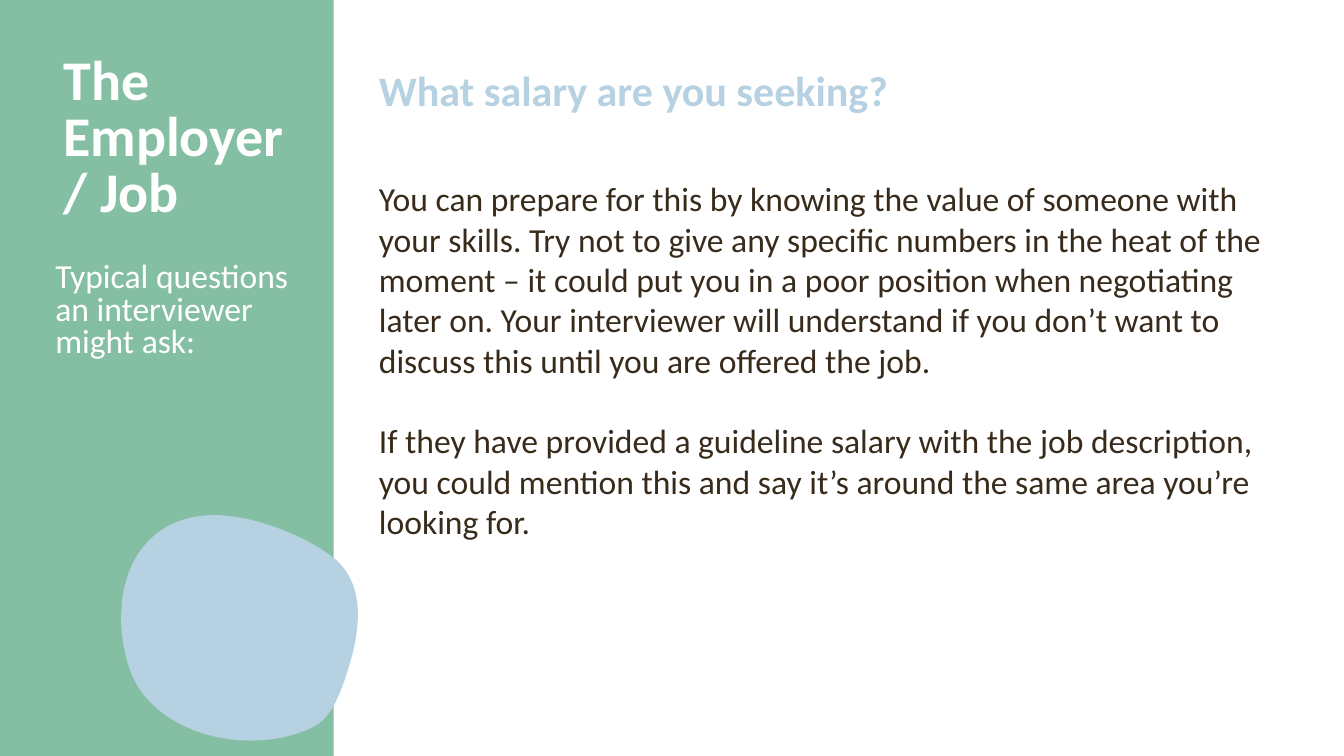
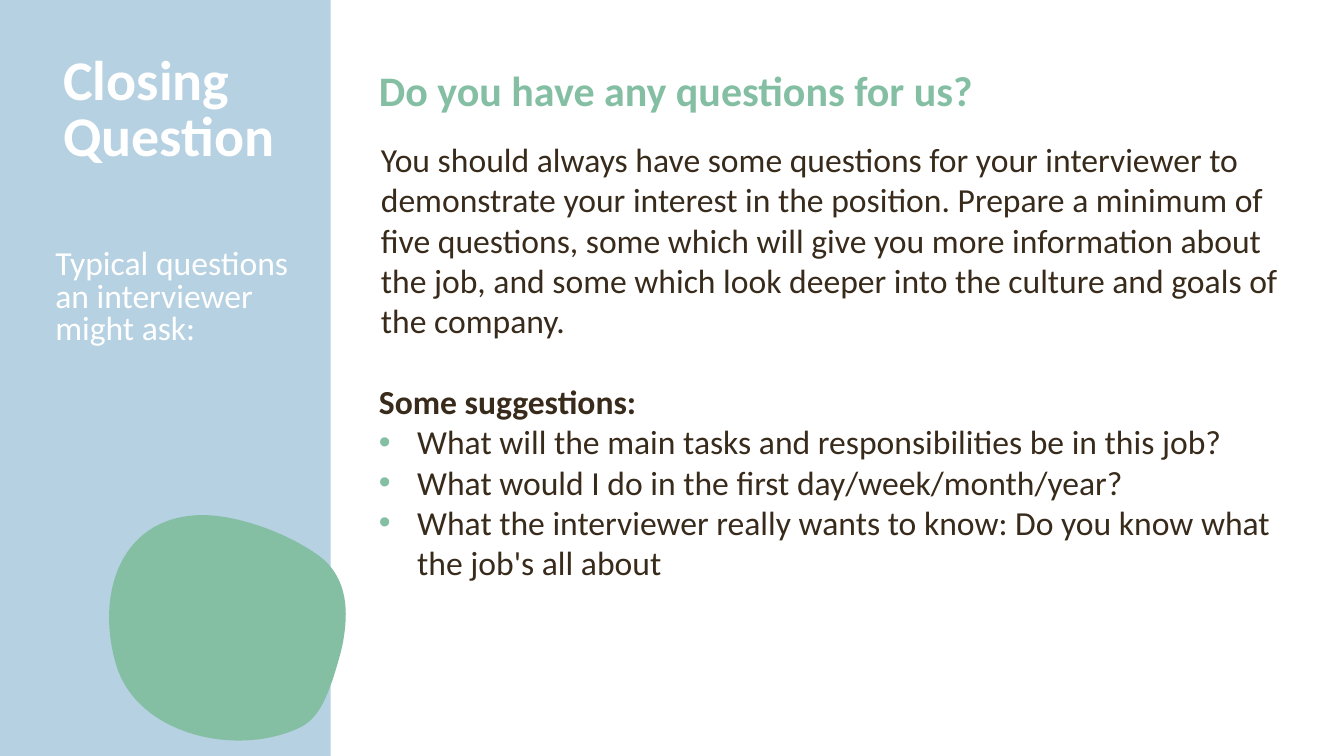
"""Build two interview advice slides with a side band and a rounded blob."""
from dataclasses import dataclass
from math import cos, radians, sin

from lxml.etree import SubElement
from pptx import Presentation
from pptx.dml.color import RGBColor
from pptx.enum.shapes import MSO_SHAPE
from pptx.oxml.ns import qn
from pptx.util import Inches, Pt

GREEN = RGBColor(0x84, 0xBF, 0xA4)
BLUE = RGBColor(0xB6, 0xD1, 0xE1)
WHITE = RGBColor(0xFF, 0xFF, 0xFF)
BROWN = RGBColor(0x38, 0x2B, 0x1B)
FONT = "Calibri"
HANG = 0.38
PITCH = 28.8
TURN = 82.8
LEFT, TOP, WIDTH, HEIGHT = 1.25, 5.05, 2.28, 2.35
START = (3.53, 6.32)
CURVES = (
    ((3.58, 6.01), (3.55, 5.69), (3.25, 5.49)),
    ((2.96, 5.29), (2.51, 5.12), (2.15, 5.11)),
    ((1.33, 5.10), (1.06, 5.87), (1.27, 6.59)),
    ((1.47, 7.28), (2.45, 7.52), (3.09, 7.22)),
    ((3.28, 7.13), (3.35, 6.93), (3.42, 6.74)),
    ((3.46, 6.61), (3.51, 6.46), START),
)


@dataclass(frozen=True)
class Para:
    text: str
    bold: bool = False
    bullet: bool = False
    indent: float = 0
    before: float = 0


@dataclass(frozen=True)
class Page:
    title: str
    head: str
    band: RGBColor
    accent: RGBColor
    width: float
    room: float
    shift: float
    ask: float
    span: float
    top: float
    wide: float
    body: tuple[Para, ...]


PAGES = (
    Page(
        "The Employer\v/ Job", "What salary are you seeking?",
        band=GREEN, accent=BLUE, width=3.31, room=2.82, shift=0, ask=2.56,
        span=7.43, top=1.72, wide=9.23,
        body=(
            Para("You can prepare for this by knowing the value of someone with "
                 "your skills. Try not to give any specific numbers in the heat of "
                 "the moment – it could put you in a poor position when negotiating "
                 "later on. Your interviewer will understand if you don’t want to "
                 "discuss this until you are offered the job."),
            Para("If they have provided a guideline salary with the job "
                 "description, you could mention this and say it’s around the same "
                 "area you’re looking for.", before=PITCH),
        ),
    ),
    Page(
        "Closing Question", "Do you have any questions for us?",
        band=BLUE, accent=GREEN, width=3.28, room=2.46, shift=-0.12, ask=2.43,
        span=8.74, top=1.33, wide=9.36,
        body=(
            Para("You should always have some questions for your interviewer to "
                 "demonstrate your interest in the position. Prepare a minimum of "
                 "five questions, some which will give you more information about "
                 "the job, and some which look deeper into the culture and goals "
                 "of the company.", indent=0.02),
            Para("Some suggestions:", bold=True, before=PITCH),
            Para("What will the main tasks and responsibilities be in this job?",
                 bullet=True),
            Para("What would I do in the first day/week/month/year?", bullet=True),
            Para("What the interviewer really wants to know: Do you know what the "
                 "job's all about", bullet=True),
        ),
    ),
)


def write(slide, paras: tuple[Para, ...], left: float, top: float, width: float,
          height: float, *, size: float, color: RGBColor,
          pitch: float | None = None, mark: RGBColor = GREEN) -> None:
    """Add a wrapped text box holding the given paragraphs."""
    frame = slide.shapes.add_textbox(
        Inches(left), Inches(top), Inches(width), Inches(height)).text_frame
    frame.word_wrap = True
    for index, para in enumerate(paras):
        line = frame.add_paragraph() if index else frame.paragraphs[0]
        props = line._p.get_or_add_pPr()
        if para.bullet:
            props.set("marL", str(Inches(HANG)))
            props.set("indent", str(-Inches(HANG)))
            tint = SubElement(props, qn("a:buClr"))
            SubElement(tint, qn("a:srgbClr"), val=str(mark))
            SubElement(props, qn("a:buFont"), typeface="Arial")
            SubElement(props, qn("a:buChar"), char="•")
        elif para.indent:
            props.set("marL", str(Inches(para.indent)))
            props.set("indent", "0")
        if pitch:
            line.line_spacing = Pt(pitch)
        if para.before:
            line.space_before = Pt(para.before)
        line.text = para.text
        for run in line.runs:
            font = run.font
            font.name, font.size, font.bold = FONT, Pt(size), para.bold
            font.color.rgb = color


def paint(shape, color: RGBColor) -> None:
    """Give a shape a flat fill with no line or shadow."""
    shape.shadow.inherit = False
    shape.fill.solid()
    shape.fill.fore_color.rgb = color
    shape.line.fill.background()


def local(point: tuple[float, float]) -> tuple[int, int]:
    """Turn a slide point back into the blob's unrotated box."""
    angle = radians(TURN)
    x, y = point[0] - LEFT - WIDTH / 2, point[1] - TOP - HEIGHT / 2
    return (Inches(x * cos(angle) + y * sin(angle) + WIDTH / 2),
            Inches(y * cos(angle) - x * sin(angle) + HEIGHT / 2))


def blob(slide, shift: float, color: RGBColor) -> None:
    """Add the rotated blob, outlined by cubic curves."""
    pen = slide.shapes.build_freeform(*local(START))
    pen.add_line_segments([local(curve[-1]) for curve in CURVES], close=True)
    shape = pen.convert_to_shape()
    shape.left, shape.top = Inches(LEFT + shift), Inches(TOP)
    shape.width, shape.height = Inches(WIDTH), Inches(HEIGHT)
    shape.rotation = TURN
    track = next(shape._element.iter(qn("a:path")))
    track.set("w", str(Inches(WIDTH)))
    track.set("h", str(Inches(HEIGHT)))
    for part in list(track):
        track.remove(part)
    moves = (("a:moveTo", (START,)), *(("a:cubicBezTo", c) for c in CURVES))
    for tag, knots in moves:
        move = SubElement(track, qn(tag))
        for knot in knots:
            x, y = local(knot)
            SubElement(move, qn("a:pt"), x=str(x), y=str(y))
    SubElement(track, qn("a:close"))
    paint(shape, color)


def draw(slide, page: Page) -> None:
    """Draw one page on a blank slide."""
    band = slide.shapes.add_shape(
        MSO_SHAPE.RECTANGLE, 0, 0, Inches(page.width), Inches(7.5))
    paint(band, page.band)
    write(slide, (Para(page.title, bold=True),), 0.53, 0.5, page.room, 2.5,
          size=40, color=WHITE, pitch=40.2)
    blob(slide, page.shift, page.accent)
    write(slide, (Para(page.head, bold=True),), 3.66, 0.59, page.span, 0.57,
          size=30, color=page.accent)
    write(slide, (Para("Typical questions an interviewer might ask:"),),
          0.45, page.ask, 2.63, 4.53 - page.ask,
          size=24, color=WHITE, pitch=23.2)
    write(slide, page.body, 3.66, page.top, page.wide, 7.08 - page.top,
          size=24, color=BROWN, pitch=PITCH, mark=page.accent)


def main() -> None:
    """Build and save the deck."""
    deck = Presentation()
    deck.slide_width, deck.slide_height = Inches(13.33), Inches(7.5)
    for page in PAGES:
        draw(deck.slides.add_slide(deck.slide_layouts[6]), page)
    deck.save("out.pptx")


if __name__ == "__main__":
    main()
